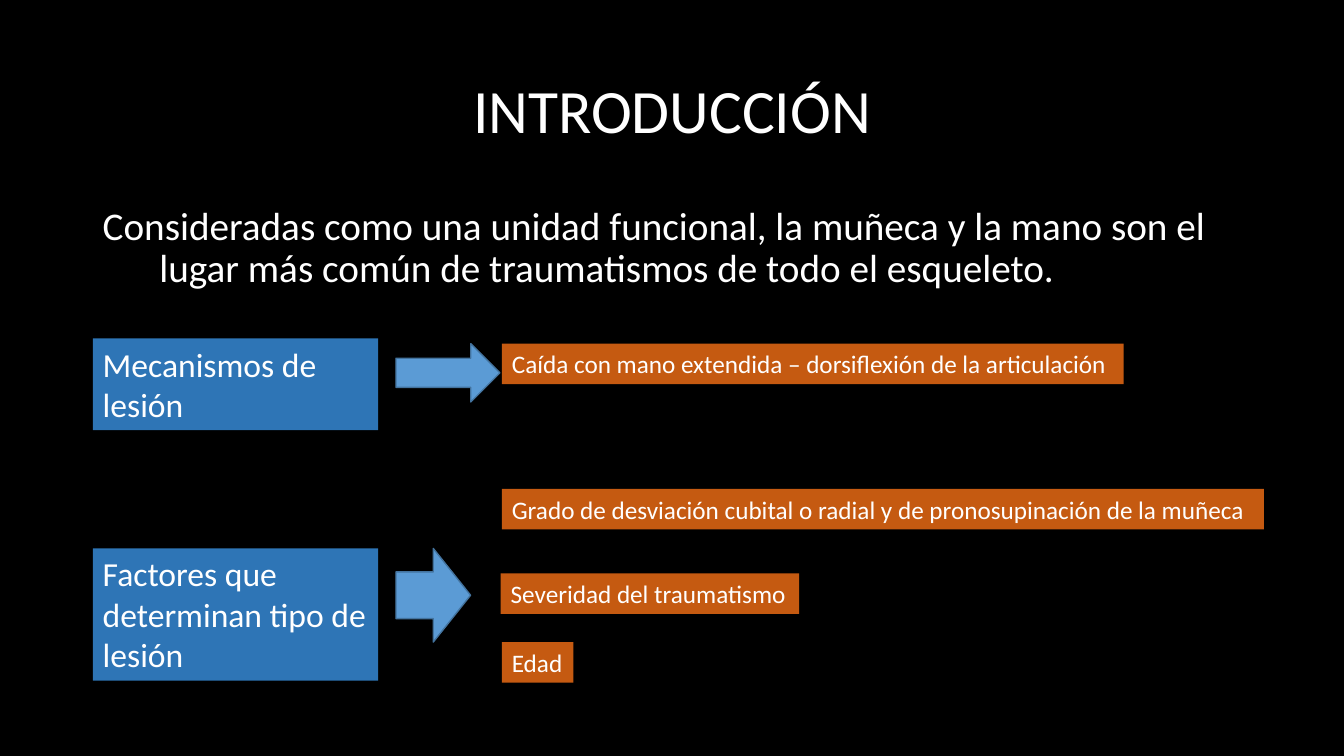
import pptx
import pptx.util
import pptx.dml.color
import pptx.enum.shapes
import pptx.enum.text

Cm, Pt = pptx.util.Cm, pptx.util.Pt
RGB = pptx.dml.color.RGBColor
ALIGN = pptx.enum.text.PP_ALIGN
ANCHOR = pptx.enum.text.MSO_ANCHOR
FIT = pptx.enum.text.MSO_AUTO_SIZE

BLACK = RGB(0x00, 0x00, 0x00)
WHITE = RGB(0xFF, 0xFF, 0xFF)
BLUE = RGB(0x2E, 0x75, 0xB6)
ORANGE = RGB(0xC5, 0x5A, 0x11)
ARROW_FILL = RGB(0x5B, 0x9B, 0xD5)
ARROW_LINE = RGB(0x43, 0x73, 0x9E)

# Content; lengths in cm
TITLE = "INTRODUCCIÓN"
INTRO = ("Consideradas como una unidad funcional, la muñeca y la mano son el "
         "lugar más común de traumatismos de todo el esqueleto.")
GROUPS = [
    {"topic": "Mecanismos de lesión", "top": 8.53, "height": 2.31,
     "arrow": (8.66, 2.62, 1.47),  # top, width, height
     "items": [  # text, left, top, width
         ("Caída con mano extendida – dorsiflexión de la articulación",
          12.65, 8.66, 15.67)]},
    {"topic": "Factores que determinan tipo de lesión", "top": 13.82, "height": 3.33,
     "arrow": (13.82, 1.88, 2.36),
     "items": [
         ("Grado de desviación cubital o radial y de pronosupinación de la muñeca",
          12.65, 12.32, 19.2),
         ("Severidad del traumatismo", 12.62, 14.45, 7.52),
         ("Edad", 12.65, 16.18, 1.8)]},
]
MARGIN, TEXT_W = 2.34, 29.21
TOPIC_W, ARROW_LEFT, ITEM_H = 7.19, 9.98, 1.02


def write(sp, text, size, align=ALIGN.LEFT, anchor=ANCHOR.TOP, spacing=None,
          wrap=True, fit=FIT.NONE):
    tf = sp.text_frame
    tf.word_wrap = wrap
    tf.auto_size = fit
    tf.vertical_anchor = anchor
    p = tf.paragraphs[0]
    p.alignment = align
    p.line_spacing = spacing
    r = p.add_run()
    r.text = text
    r.font.size = Pt(size)
    r.font.name = "Calibri"
    r.font.color.rgb = WHITE
    return p


def add_label(slide, box, text, size, color, wrap):
    sp = slide.shapes.add_textbox(*map(Cm, box))
    sp.fill.solid()
    sp.fill.fore_color.rgb = color
    write(sp, text, size, wrap=wrap, fit=FIT.SHAPE_TO_FIT_TEXT)


def add_arrow(slide, top, width, height):
    sp = slide.shapes.add_shape(pptx.enum.shapes.MSO_SHAPE.RIGHT_ARROW,
                                Cm(ARROW_LEFT), Cm(top), Cm(width), Cm(height))
    sp.shadow.inherit = False
    sp.fill.solid()
    sp.fill.fore_color.rgb = ARROW_FILL
    sp.line.color.rgb = ARROW_LINE
    sp.line.width = Pt(1)


def main():
    prs = pptx.Presentation()
    prs.slide_width, prs.slide_height = Cm(33.87), Cm(19.05)
    slide = prs.slides.add_slide(prs.slide_layouts[5])
    slide.background.fill.solid()
    slide.background.fill.fore_color.rgb = BLACK

    # Title
    title = slide.shapes.title
    title.left, title.top = Cm(MARGIN), Cm(1.02)
    title.width, title.height = Cm(TEXT_W), Cm(3.68)
    write(title, TITLE, 44, align=ALIGN.CENTER, anchor=ANCHOR.MIDDLE, spacing=0.9)

    # Introduction with a hanging indent
    intro = slide.shapes.add_textbox(Cm(MARGIN), Cm(5.08), Cm(TEXT_W), Cm(3.61))
    p = write(intro, INTRO, 28, spacing=0.9)
    pPr = p._p.get_or_add_pPr()
    pPr.set("marL", str(Cm(1.43)))
    pPr.set("indent", str(-Cm(1.43)))

    # Topics, arrows and their items
    for group in GROUPS:
        add_label(slide, (MARGIN, group["top"], TOPIC_W, group["height"]),
                  group["topic"], 24, BLUE, wrap=True)
        add_arrow(slide, *group["arrow"])
        for text, left, top, width in group["items"]:
            add_label(slide, (left, top, width, ITEM_H), text, 18, ORANGE, wrap=False)

    prs.save("out.pptx")


if __name__ == "__main__":
    main()
